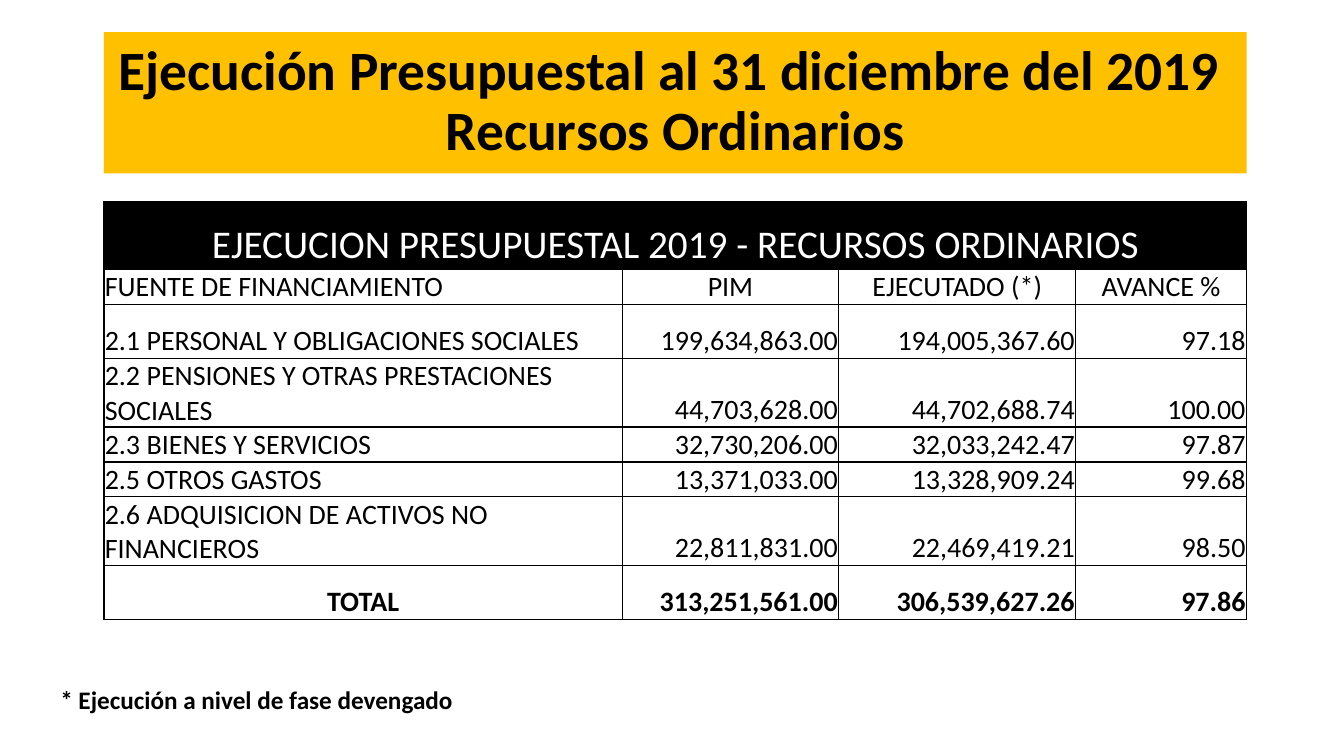
from lxml import etree
from pptx import Presentation
from pptx.dml.color import RGBColor
from pptx.enum.text import MSO_ANCHOR, PP_ALIGN
from pptx.oxml.ns import qn
from pptx.util import Cm, Pt

BLACK = RGBColor(0x00, 0x00, 0x00)
WHITE = RGBColor(0xFF, 0xFF, 0xFF)
AMBER = RGBColor(0xFF, 0xC0, 0x00)
LEFT, CENTER, RIGHT = PP_ALIGN.LEFT, PP_ALIGN.CENTER, PP_ALIGN.RIGHT
MIDDLE, BOTTOM = MSO_ANCHOR.MIDDLE, MSO_ANCHOR.BOTTOM

MARGIN = Cm(2.62)
CONTENT_WIDTH = Cm(28.8)
COLUMN_WIDTHS = [13.06, 5.46, 5.97, 4.3]
ROW_HEIGHTS = [1.7, 0.88, 1.36, 1.73, 0.88, 0.88, 1.73, 1.36]
ROWS = [
    ("EJECUCION PRESUPUESTAL 2019 - RECURSOS ORDINARIOS", "", "", ""),
    ("FUENTE DE FINANCIAMIENTO", "PIM", "EJECUTADO (*)", "AVANCE %"),
    ("2.1 PERSONAL Y OBLIGACIONES SOCIALES", "199,634,863.00", "194,005,367.60", "97.18"),
    ("2.2 PENSIONES Y OTRAS PRESTACIONES SOCIALES", "44,703,628.00", "44,702,688.74", "100.00"),
    ("2.3 BIENES Y SERVICIOS", "32,730,206.00", "32,033,242.47", "97.87"),
    ("2.5 OTROS GASTOS", "13,371,033.00", "13,328,909.24", "99.68"),
    ("2.6 ADQUISICION DE ACTIVOS NO FINANCIEROS", "22,811,831.00", "22,469,419.21", "98.50"),
    ("TOTAL", "313,251,561.00", "306,539,627.26", "97.86"),
]
BANNER_ROW, HEADING_ROW, TOTAL_ROW = 0, 1, len(ROWS) - 1


def style_paragraph(para, size, color=BLACK, bold=False, align=LEFT):
    para.alignment = align
    para.font.name = "Calibri"
    para.font.size = Pt(size)
    para.font.bold = bold
    para.font.color.rgb = color


def add_borders(cell):
    """Draw a thin black line on all four sides of a table cell."""
    properties = cell._tc.get_or_add_tcPr()
    for side in ("a:lnL", "a:lnR", "a:lnT", "a:lnB"):
        line = etree.SubElement(properties, qn(side), w=str(Pt(1)))
        fill = etree.SubElement(line, qn("a:solidFill"))
        etree.SubElement(fill, qn("a:srgbClr"), val=str(BLACK))


deck = Presentation()
deck.slide_width, deck.slide_height = Cm(33.87), Cm(19.05)
page = deck.slides.add_slide(deck.slide_layouts[6])

# Title band
title = page.shapes.add_textbox(MARGIN, Cm(0.81), CONTENT_WIDTH, Cm(3.56))
title.fill.solid()
title.fill.fore_color.rgb = AMBER
title.text_frame.word_wrap = True
title.text_frame.vertical_anchor = MIDDLE
para = title.text_frame.paragraphs[0]
para.text = "Ejecución Presupuestal al 31 diciembre del 2019 \vRecursos Ordinarios"
para.line_spacing = 0.9
style_paragraph(para, 39.6, bold=True, align=CENTER)

# Footnote
footnote = page.shapes.add_textbox(Cm(1.27), Cm(17.12), Cm(10.64), Cm(1.02))
footnote.text_frame.word_wrap = False
para = footnote.text_frame.paragraphs[0]
para.text = "* Ejecución a nivel de fase devengado"
style_paragraph(para, 18, bold=True)

# Budget table
table = page.shapes.add_table(
    len(ROWS), len(COLUMN_WIDTHS), MARGIN, Cm(5.09), CONTENT_WIDTH, Cm(sum(ROW_HEIGHTS))
).table
table.first_row = table.horz_banding = False
for column, width in zip(table.columns, COLUMN_WIDTHS):
    column.width = Cm(width)
for row, height in zip(table.rows, ROW_HEIGHTS):
    row.height = Cm(height)
table.cell(BANNER_ROW, 0).merge(table.cell(BANNER_ROW, len(COLUMN_WIDTHS) - 1))

for row_index, values in enumerate(ROWS):
    is_banner = row_index == BANNER_ROW
    for column_index, value in enumerate(values):
        cell = table.cell(row_index, column_index)
        add_borders(cell)
        if is_banner:
            cell.fill.solid()
            cell.fill.fore_color.rgb = BLACK
        else:
            cell.fill.background()
        cell.vertical_anchor = BOTTOM
        cell.margin_left = cell.margin_right = cell.margin_top = Cm(0.02)
        cell.margin_bottom = 0

        if column_index == 0:
            align = CENTER if row_index in (BANNER_ROW, TOTAL_ROW) else LEFT
        else:
            align = CENTER if row_index == HEADING_ROW else RIGHT
        para = cell.text_frame.paragraphs[0]
        para.text = value
        style_paragraph(
            para,
            size=28 if is_banner else 20,
            color=WHITE if is_banner else BLACK,
            bold=row_index == TOTAL_ROW,
            align=align,
        )

deck.save("out.pptx")
